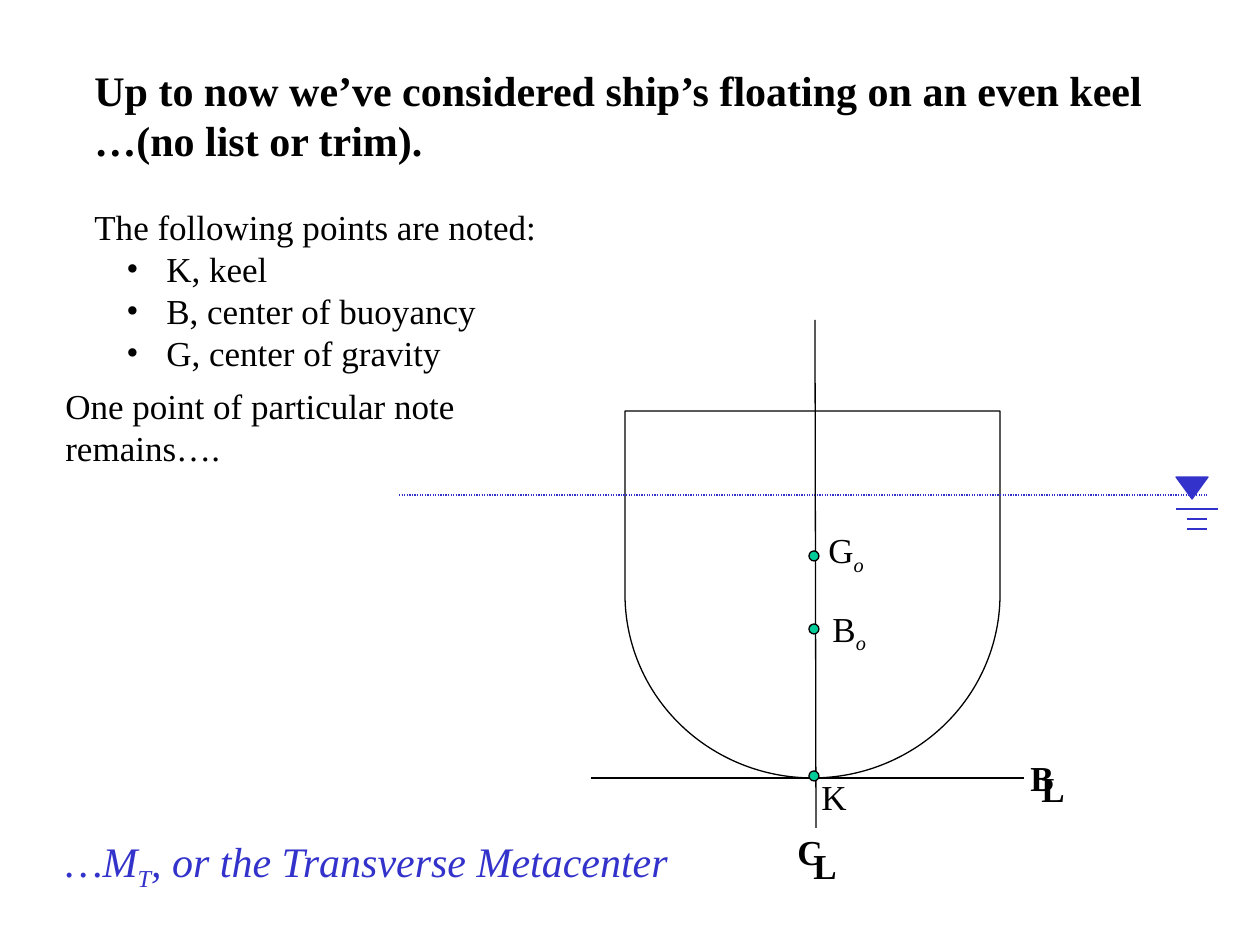
from lxml import etree
from pptx import Presentation, util as u
from pptx.dml.color import RGBColor
from pptx.enum import dml, shapes
from pptx.oxml.ns import qn

EMU_PER_PX = 914400 / 126
FONT = "Times New Roman"
BLACK, BLUE, GREEN = "000000", "3333CC", "00CC99"


def px(length):
    return u.Emu(round(length * EMU_PER_PX))


def color(value):
    return RGBColor.from_string(value)


def add_shape(slide, kind, box, line=BLACK, fill=None, rotation=0):
    shape = slide.shapes.add_shape(kind, *map(px, box))
    shape.shadow.inherit = False
    shape.rotation = rotation
    if fill:
        shape.fill.solid()
        shape.fill.fore_color.rgb = color(fill)
    else:
        shape.fill.background()
    shape.line.color.rgb = color(line)
    shape.line.width = u.Pt(0.75)


def add_line(slide, start, end, line=BLACK, dash=None):
    connector = slide.shapes.add_connector(
        shapes.MSO_CONNECTOR.STRAIGHT, *map(px, start + end))
    connector.line.color.rgb = color(line)
    connector.line.width = u.Pt(0.75)
    if dash:
        connector.line.dash_style = dash
    etree.SubElement(connector._element.spPr, qn("a:effectLst"))


def add_text_box(slide, box, wrap=False):
    frame = slide.shapes.add_textbox(*map(px, box)).text_frame
    frame.word_wrap = wrap
    return frame


def add_run(paragraph, content, size=20, fill=BLACK, bold=False, italic=False, subscript=False):
    run = paragraph.add_run()
    run.text = content
    font = run.font
    font.name, font.size, font.bold, font.italic = FONT, u.Pt(size), bold, italic
    font.color.rgb = color(fill)
    if subscript:
        run._r.get_or_add_rPr().set("baseline", "-25000")


def add_bullet(paragraph, margin, hanging):
    properties = paragraph._p.get_or_add_pPr()
    properties.set("marL", str(px(margin)))
    properties.set("indent", str(-px(hanging)))
    etree.SubElement(properties, qn("a:buFont"), typeface=FONT)
    etree.SubElement(properties, qn("a:buChar"), char="•")


def add_label(slide, box, content, subscript=None, bold=False, wrap=False):
    paragraph = add_text_box(slide, box, wrap).paragraphs[0]
    add_run(paragraph, content, bold=bold)
    if subscript:
        add_run(paragraph, subscript, italic=True, subscript=True)


def draw_hull(slide):
    add_shape(slide, shapes.MSO_SHAPE.FLOWCHART_DELAY, (629, 407, 367, 375), rotation=90)
    add_line(slide, (399, 495), (1207, 495), BLUE, dml.MSO_LINE.ROUND_DOT)
    add_line(slide, (815, 320), (816, 828))
    add_line(slide, (591, 778), (1024, 778))


def draw_water_symbol(slide):
    add_shape(slide, shapes.MSO_SHAPE.ISOSCELES_TRIANGLE, (1176, 477, 32, 22),
              BLUE, BLUE, rotation=180)
    for left, right, y in ((1176, 1218, 509), (1187, 1207, 519), (1187, 1207, 529)):
        add_line(slide, (left, y), (right, y), BLUE)


def draw_points(slide):
    add_label(slide, (785, 824, 62, 54), "C", bold=True, wrap=True)
    add_label(slide, (801, 838, 81, 54), "L", bold=True, wrap=True)
    add_label(slide, (1018, 750, 49, 54), "B", bold=True)
    add_label(slide, (1029, 761, 49, 54), "L", bold=True)
    add_label(slide, (816, 522, 62, 54), "G", "o")
    add_label(slide, (820, 601, 60, 54), "B", "o")
    add_label(slide, (809, 769, 50, 54), "K")
    for top in (771, 624, 551):
        add_shape(slide, shapes.MSO_SHAPE.FLOWCHART_CONNECTOR, (809, top, 10, 10), fill=GREEN)


def write_notes(slide):
    frame = add_text_box(slide, (82, 58, 1086, 324), wrap=True)
    paragraph = frame.paragraphs[0]
    add_run(paragraph, "Up to now we’ve considered ship’s floating on an even keel", 24, bold=True)
    add_run(frame.add_paragraph(), "…(no list or trim).", 24, bold=True)
    paragraph = frame.add_paragraph()
    paragraph.space_before = u.Pt(23)
    add_run(paragraph, "The following points are noted:")
    for point in ("K, keel", "B, center of buoyancy", "G, center of gravity"):
        paragraph = frame.add_paragraph()
        add_bullet(paragraph, margin=72, hanging=40)
        add_run(paragraph, point)
    add_label(slide, (53, 378, 570, 54), "One point of particular note remains….", wrap=True)


def write_conclusion(slide):
    paragraph = add_text_box(slide, (53, 829, 633, 63), wrap=True).paragraphs[0]
    for content, subscript in (("…M", False), ("T", True), (", or the Transverse Metacenter", False)):
        add_run(paragraph, content, 24, BLUE, italic=True, subscript=subscript)


def main():
    presentation = Presentation()
    presentation.slide_width, presentation.slide_height = px(1260), px(945)
    slide = presentation.slides.add_slide(presentation.slide_layouts[6])
    draw_hull(slide)
    draw_water_symbol(slide)
    draw_points(slide)
    write_notes(slide)
    write_conclusion(slide)
    presentation.save("out.pptx")


if __name__ == "__main__":
    main()
